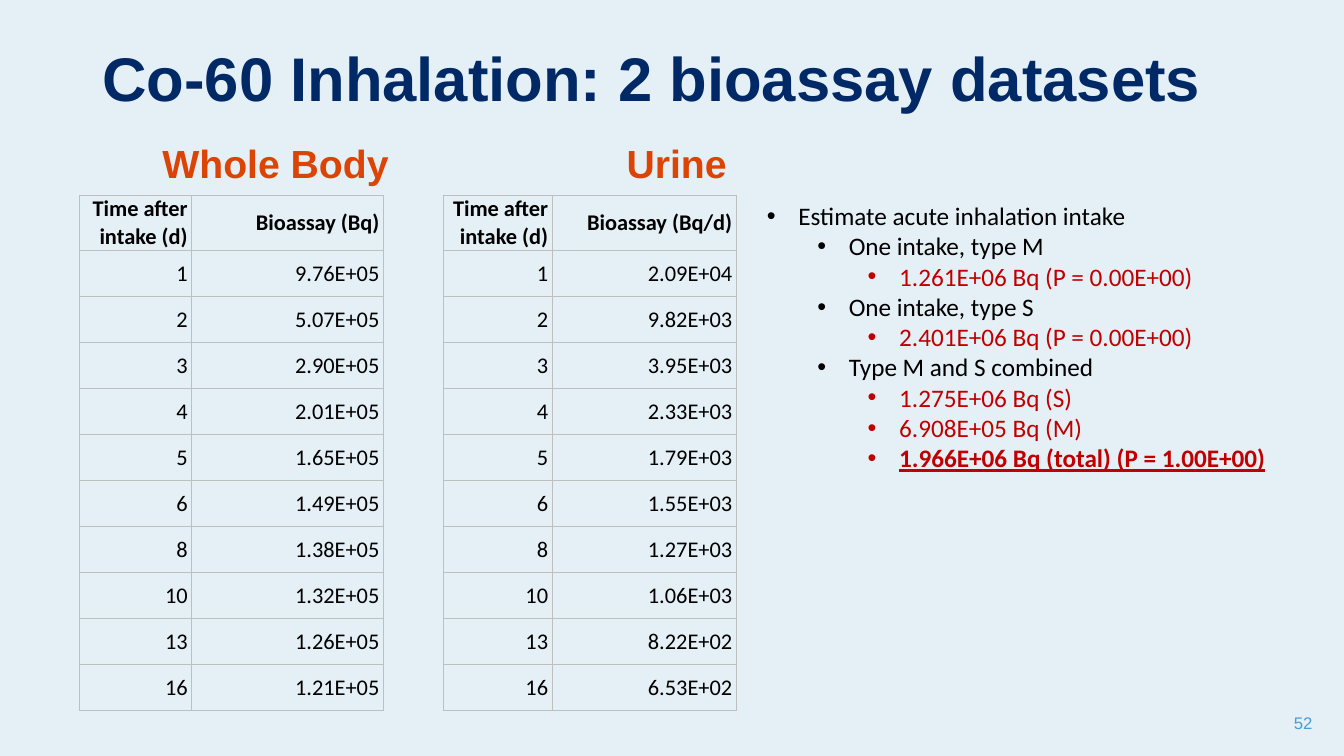
import pptx
import pptx.dml.color
import pptx.enum.text
import pptx.oxml
import pptx.oxml.ns
import pptx.util
from lxml import etree

Pt = pptx.util.Pt
ALIGN = pptx.enum.text.PP_ALIGN
ANCHOR = pptx.enum.text.MSO_ANCHOR
qn = pptx.oxml.ns.qn

BACKGROUND, NAVY, ORANGE, BLUE = "E5EFF6", "002966", "DC4405", "4B9CD3"
BLACK, RED, GRID = "000000", "C00000", "BFBFBF"

TITLE_FONT = {"name": "Arial", "size": Pt(44), "bold": True}
HEADING_FONT = {"name": "Arial", "size": Pt(28), "bold": True}
NUMBER_FONT = {"name": "Arial", "size": Pt(12)}
CELL_FONT = {"name": "Calibri", "size": Pt(16)}
RESULT_FONT = {"name": "Calibri", "size": Pt(18)}

HEADING_HEIGHT, HEADER_ROW, DATA_ROW = 42, 39.4, 32.9
DAYS = [1, 2, 3, 4, 5, 6, 8, 10, 13, 16]
WHOLE_BODY = ["9.76E+05", "5.07E+05", "2.90E+05", "2.01E+05", "1.65E+05",
              "1.49E+05", "1.38E+05", "1.32E+05", "1.26E+05", "1.21E+05"]
URINE = ["2.09E+04", "9.82E+03", "3.95E+03", "2.33E+03", "1.79E+03",
         "1.55E+03", "1.27E+03", "1.06E+03", "8.22E+02", "6.53E+02"]
EMPHASIS = {"bold": True, "underline": True}
RESULTS = [
    (0, "Estimate acute inhalation intake", BLACK, {}),
    (1, "One intake, type M", BLACK, {}),
    (2, "1.261E+06 Bq (P = 0.00E+00)", RED, {}),
    (1, "One intake, type S", BLACK, {}),
    (2, "2.401E+06 Bq (P = 0.00E+00)", RED, {}),
    (1, "Type M and S combined", BLACK, {}),
    (2, "1.275E+06 Bq (S)", RED, {}),
    (2, "6.908E+05 Bq (M)", RED, {}),
    (2, "1.966E+06 Bq (total) (P = 1.00E+00)", RED, EMPHASIS),
]


def rgb(value):
    return pptx.dml.color.RGBColor.from_string(value)


def apply(target, values):
    for key, value in values.items():
        setattr(target, key, value)


def write(paragraph, text, color, font, layout):
    paragraph.text = text
    apply(paragraph, layout)
    apply(paragraph.runs[0].font, font)
    paragraph.runs[0].font.color.rgb = rgb(color)


def add_frame(slide, box, anchor):
    frame = slide.shapes.add_textbox(*map(Pt, box)).text_frame
    apply(frame, {"word_wrap": True, "vertical_anchor": anchor})
    return frame


def add_line(slide, box, text, color, font, layout):
    frame = add_frame(slide, box, ANCHOR.MIDDLE)
    write(frame.paragraphs[0], text, color, font, layout)


def add_borders(cell):
    properties = cell._tc.get_or_add_tcPr()
    for side in ("lnL", "lnR", "lnT", "lnB"):
        border = etree.SubElement(properties, qn("a:" + side), w=str(Pt(0.75)))
        fill = etree.SubElement(border, qn("a:solidFill"))
        etree.SubElement(fill, qn("a:srgbClr"), val=GRID)


def add_dataset(slide, box, heading, heading_inset, unit, readings, day_width):
    left, top, width, height = box
    add_line(slide, (left + heading_inset, top, width - heading_inset + 20, HEADING_HEIGHT),
             heading, ORANGE, HEADING_FONT, {"line_spacing": 0.9})
    rows = [("Time after intake (d)", f"Bioassay ({unit})"), *zip(DAYS, readings)]
    table = slide.shapes.add_table(
        len(rows), 2, Pt(left), Pt(top + HEADING_HEIGHT),
        Pt(width), Pt(height - HEADING_HEIGHT)).table
    apply(table, {"first_row": False, "horz_banding": False})
    for column, column_width in zip(table.columns, (day_width, width - day_width)):
        column.width = Pt(column_width)
    for index, values in enumerate(rows):
        table.rows[index].height = Pt(DATA_ROW if index else HEADER_ROW)
        for cell, value in zip(table.rows[index].cells, values):
            apply(cell, {"vertical_anchor": ANCHOR.MIDDLE, "margin_left": Pt(3),
                         "margin_right": Pt(3), "margin_top": 0, "margin_bottom": 0})
            add_borders(cell)
            cell.fill.background()
            write(cell.text_frame.paragraphs[0], str(value), BLACK,
                  {**CELL_FONT, "bold": index == 0}, {"alignment": ALIGN.RIGHT})


def add_results(slide, box):
    frame = add_frame(slide, box, ANCHOR.TOP)
    for index, (level, text, color, emphasis) in enumerate(RESULTS):
        paragraph = frame.add_paragraph() if index else frame.paragraphs[0]
        properties = paragraph._p.get_or_add_pPr()
        properties.set("marL", str(Pt(22.5 + 36 * level)))
        properties.set("indent", str(Pt(-22.5)))
        etree.SubElement(properties, qn("a:buFont"), typeface="Arial")
        etree.SubElement(properties, qn("a:buChar"), char="•")
        write(paragraph, text, color, {**RESULT_FONT, **emphasis}, {"level": level})


def main():
    deck = pptx.Presentation()
    apply(deck, {"slide_width": Pt(960), "slide_height": Pt(540)})
    slide = deck.slides.add_slide(deck.slide_layouts[6])
    slide.background.fill.solid()
    slide.background.fill.fore_color.rgb = rgb(BACKGROUND)

    add_line(slide, (66, 18.7, 828, 79.2), "Co-60 Inhalation: 2 bioassay datasets",
             NAVY, TITLE_FONT, {"line_spacing": 0.9})
    dataset_height = HEADING_HEIGHT + HEADER_ROW + DATA_ROW * len(DAYS)
    dataset_top = 139.5 - HEADING_HEIGHT
    add_dataset(slide, (57, dataset_top, 217, dataset_height),
                "Whole Body", 52, "Bq", WHOLE_BODY, 80)
    add_dataset(slide, (316.5, dataset_top, 209.5, dataset_height),
                "Urine", 124, "Bq/d", URINE, 78)
    add_results(slide, (540.7, 139.7, 376, 247))
    add_line(slide, (728.6, 502, 216, 28.8), "52", BLUE, NUMBER_FONT,
             {"alignment": ALIGN.RIGHT})
    deck.save("out.pptx")


if __name__ == "__main__":
    main()
